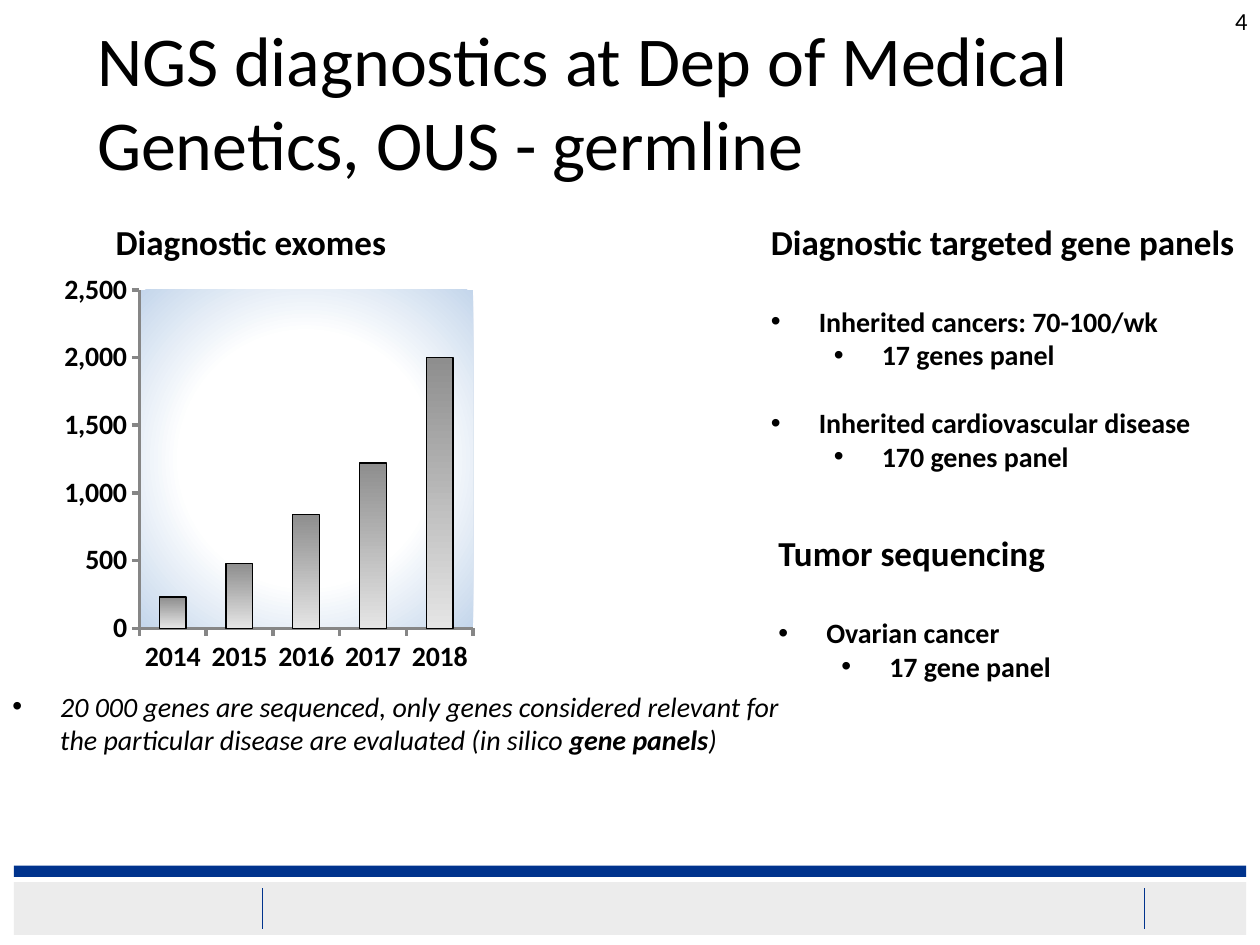
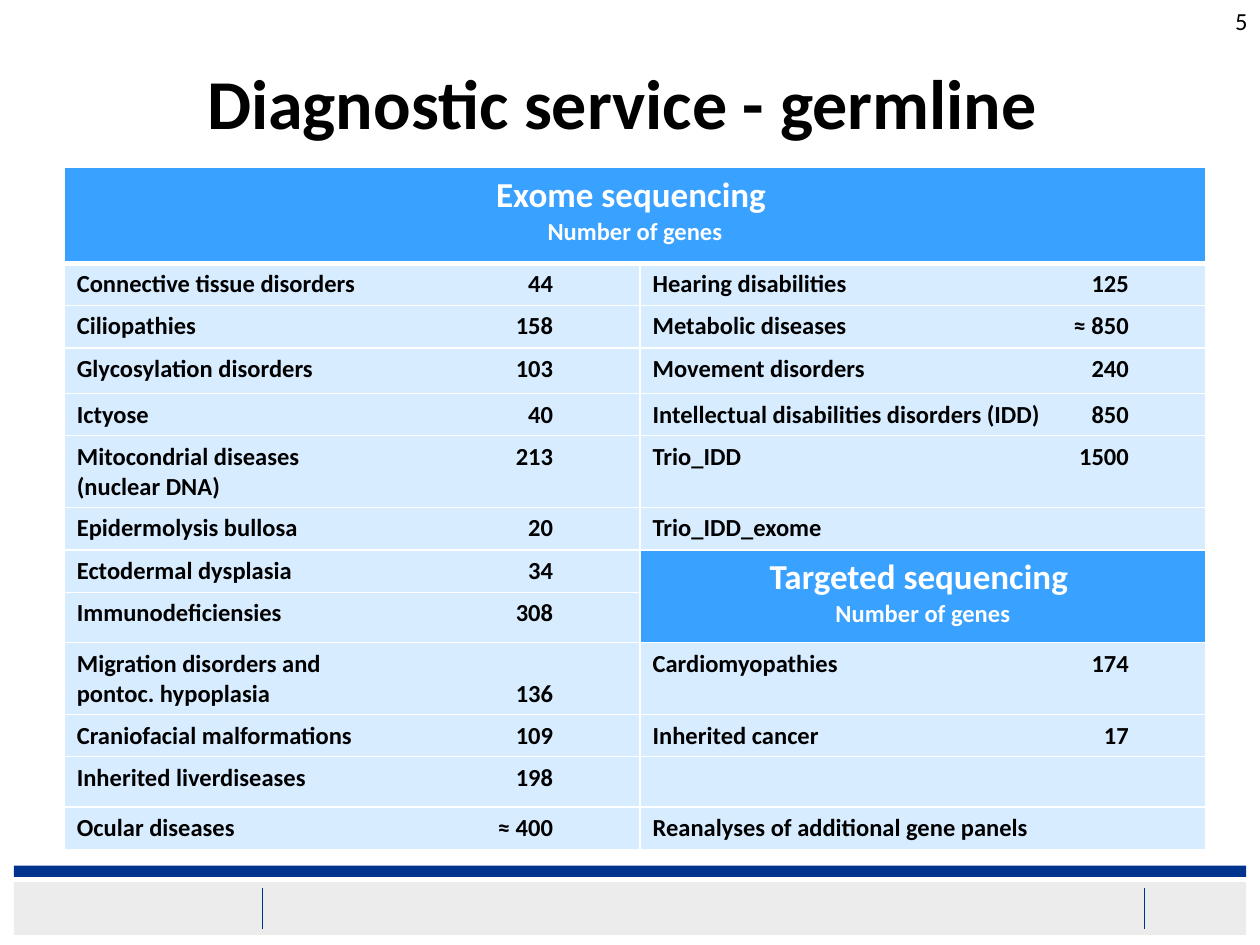
from lxml import etree
from pptx import Presentation
from pptx.chart.data import CategoryChartData
from pptx.dml.color import RGBColor
from pptx.enum.chart import XL_CHART_TYPE, XL_TICK_MARK
from pptx.enum.shapes import MSO_CONNECTOR, MSO_SHAPE
from pptx.enum.text import MSO_ANCHOR, MSO_AUTO_SIZE, PP_ALIGN
from pptx.oxml import parse_xml
from pptx.oxml.ns import nsdecls, qn
from pptx.util import Inches, Pt

LEFT, CENTER, RIGHT = PP_ALIGN.LEFT, PP_ALIGN.CENTER, PP_ALIGN.RIGHT
MIDDLE = MSO_ANCHOR.MIDDLE
NO_FIT = MSO_AUTO_SIZE.NONE
COLUMN = XL_CHART_TYPE.COLUMN_CLUSTERED
TICK_OUT = XL_TICK_MARK.OUTSIDE
RECT, STRAIGHT = MSO_SHAPE.RECTANGLE, MSO_CONNECTOR.STRAIGHT

BLACK = RGBColor(0x00, 0x00, 0x00)
WHITE = RGBColor(0xFF, 0xFF, 0xFF)
NAVY = RGBColor(0x00, 0x33, 0x8D)
PALE = RGBColor(0xEC, 0xEC, 0xEC)
BLUE = RGBColor(0x39, 0xA1, 0xFF)
LIGHT = RGBColor(0xD7, 0xEC, 0xFF)
HAZE = RGBColor(0xC4, 0xD6, 0xEB)
AXIS = RGBColor(0x86, 0x86, 0x86)
BAR_TOP = RGBColor(0x8E, 0x8E, 0x8E)
BAR_END = RGBColor(0xE5, 0xE5, 0xE5)
FONT = "Calibri"
TAB = Inches(3.78)

EXOMES = {"2014": 230, "2015": 480, "2016": 840, "2017": 1220, "2018": 2000}

# Each line: text, bullet level (None for a heading), space before in points
PANELS = [
    ("Diagnostic targeted gene panels", None, 0),
    ("Inherited cancers: 70-100/wk", 0, 24),
    ("17 genes panel", 1, 0),
    ("Inherited cardiovascular disease", 0, 19.5),
    ("170 genes panel", 1, 0),
]
TUMOR = [
    ("Tumor sequencing", None, 0),
    ("Ovarian cancer", 0, 24),
    ("17 gene panel", 1, 0),
]

# Each row: height, left cell, right cell
GENES = [
    (0.33, "Connective tissue disorders\t44", "Hearing disabilities\t125"),
    (0.34, "Ciliopathies\t158", "Metabolic diseases\t≈ 850"),
    (0.36, "Glycosylation disorders\t103", "Movement disorders\t240"),
    (0.33, "Ictyose\t40", "Intellectual disabilities disorders (IDD)\t850"),
    (0.57, "Mitocondrial diseases\t213\n(nuclear DNA)", "Trio_IDD\t1500"),
    (0.34, "Epidermolysis bullosa\t20", "Trio_IDD_exome"),
    (0.33, "Ectodermal dysplasia\t34", None),
    (0.40, "Immunodeficiensies\t308", None),
    (0.57, "Migration disorders and\npontoc. hypoplasia\t136",
     "Cardiomyopathies\t174"),
    (0.33, "Craniofacial malformations\t109", "Inherited cancer\t17"),
    (0.36, "Inherited liverdiseases\t198", ""),
    (0.34, "Ocular diseases\t≈ 400", "Reanalyses of additional gene panels"),
]
HEAD_ROW, TARGET_ROW = 0, 7


def box(*sizes):
    return [Inches(size) for size in sizes]


def style(item, **values):
    for name, value in values.items():
        setattr(item, name, value)


def set_font(font, size, color=BLACK, **marks):
    style(font, name=FONT, size=Pt(size), **marks)
    font.color.rgb = color


def add_run(para, text, size, color=BLACK, **marks):
    run = para.add_run()
    run.text = text
    set_font(run.font, size, color, **marks)


def add_bullet(para, level):
    props = para._p.get_or_add_pPr()
    props.set("marL", str(Inches(0.38 + 0.5 * level)))
    props.set("indent", str(-Inches(0.38)))
    etree.SubElement(props, qn("a:buFont")).set("typeface", "Arial")
    etree.SubElement(props, qn("a:buChar")).set("char", "•")


def add_tab(para):
    tabs = etree.SubElement(para._p.get_or_add_pPr(), qn("a:tabLst"))
    tab = etree.SubElement(tabs, qn("a:tab"))
    tab.set("pos", str(TAB))
    tab.set("algn", "r")


def add_box(slide, place):
    frame = slide.shapes.add_textbox(*box(*place)).text_frame
    frame.word_wrap = True
    return frame


def next_para(frame, index):
    return frame.add_paragraph() if index else frame.paragraphs[0]


def add_list(slide, place, lines):
    frame = add_box(slide, place)
    for i, (text, level, gap) in enumerate(lines):
        para = next_para(frame, i)
        if level is not None:
            add_bullet(para, level)
        if gap:
            para.space_before = Pt(gap)
        add_run(para, text, 20 if level is None else 16, bold=True)


def add_slide(prs, title, place, number, align=LEFT, bold=False):
    slide = prs.slides.add_slide(prs.slide_layouts[5])
    head = slide.shapes.title
    left, top, width, height = box(*place)
    style(head, left=left, top=top, width=width, height=height)
    style(head.text_frame, vertical_anchor=MIDDLE, auto_size=NO_FIT,
          word_wrap=True)
    para = head.text_frame.paragraphs[0]
    para.alignment = align
    add_run(para, title, 40, bold=bold)

    para = add_box(slide, (7.92, 0, 2.08, 0.29)).paragraphs[0]
    para.alignment = RIGHT
    add_run(para, number, 14)
    return slide


def add_band(prs, slide):
    """Draw the footer band on a slide, then move it to the master."""
    parts = []
    for top, height, color in ((7, 0.42, PALE), (6.87, 0.09, NAVY)):
        bar = slide.shapes.add_shape(RECT, *box(0.11, top, 9.78, height))
        bar.shadow.inherit = False
        bar.fill.solid()
        bar.fill.fore_color.rgb = color
        bar.line.fill.background()
        parts.append(bar)
    for x in (2.08, 9.08):
        rule = slide.shapes.add_connector(STRAIGHT, *box(x, 7.05, x, 7.37))
        rule.line.color.rgb = NAVY
        rule.line.width = Pt(0.25)
        etree.SubElement(rule._element.spPr, qn("a:effectLst"))
        parts.append(rule)
    tree = prs.slide_master.shapes.element
    for i, part in enumerate(parts):
        part.element.xpath(".//p:cNvPr")[0].set("id", str(100 + i))
        tree.append(part.element)


def shape_plot(chart):
    """Place the inner plot area and give it a round gradient."""
    plot = chart._chartSpace.chart.plotArea
    for old in plot.findall(qn("c:layout")):
        plot.remove(old)
    sizes = {"x": 0.15, "y": 0.13, "w": 0.69, "h": 0.67}
    marks = "".join(f'<c:{k}Mode val="edge"/>' for k in "xy")
    marks += "".join(f'<c:{k} val="{v}"/>' for k, v in sizes.items())
    plot.insert(0, parse_xml(
        f'<c:layout {nsdecls("c")}><c:manualLayout>'
        f'<c:layoutTarget val="inner"/>{marks}</c:manualLayout></c:layout>'))
    stops = "".join(
        f'<a:gs pos="{pos}000"><a:srgbClr val="{color}"/></a:gs>'
        for pos, color in ((53, WHITE), (100, HAZE)))
    plot.append(parse_xml(
        f'<c:spPr {nsdecls("c", "a")}><a:gradFill><a:gsLst>{stops}</a:gsLst>'
        '<a:path path="circle"><a:fillToRect l="50000" t="50000" r="50000"'
        ' b="50000"/></a:path></a:gradFill></c:spPr>'))


def add_bars(slide, place, values):
    data = CategoryChartData(number_format="#,##0")
    data.categories = list(values)
    data.add_series("Series 1", list(values.values()))
    chart = slide.shapes.add_chart(COLUMN, *box(*place), data).chart
    style(chart, has_title=False, has_legend=False)
    set_font(chart.font, 10)
    for axis in (chart.category_axis, chart.value_axis):
        style(axis, has_major_gridlines=False, major_tick_mark=TICK_OUT)
        set_font(axis.tick_labels.font, 16, bold=True)
        axis.format.line.color.rgb = AXIS
        axis.format.line.width = Pt(2)
    style(chart.value_axis, minimum_scale=0, maximum_scale=2500,
          major_unit=500)
    style(chart.value_axis.tick_labels, number_format="#,##0",
          number_format_is_linked=False)
    style(chart.plots[0], gap_width=150, vary_by_categories=False)

    look = chart.plots[0].series[0].format
    look.fill.gradient()
    look.fill.gradient_angle = 270
    for stop, color in zip(look.fill.gradient_stops, (BAR_TOP, BAR_END)):
        stop.color.rgb = color
    look.line.color.rgb = BLACK
    look.line.width = Pt(0.75)
    shape_plot(chart)


def paint(cell, fill, base=1):
    """Give a cell white borders and a fill; base is the lower border."""
    props = cell._tc.get_or_add_tcPr()
    for side, width in zip("LRTB", (1, 1, 1, base)):
        props.append(parse_xml(
            f'<a:ln{side} {nsdecls("a")} w="{Pt(width)}"><a:solidFill>'
            f'<a:srgbClr val="{WHITE}"/></a:solidFill></a:ln{side}>'))
    cell.fill.solid()
    cell.fill.fore_color.rgb = fill


def fill_head(cell, text):
    for i, (line, size) in enumerate(((text, 20), ("Number of genes", 14))):
        para = next_para(cell.text_frame, i)
        para.alignment = CENTER
        add_run(para, line, size, WHITE, bold=True)


def fill_cell(cell, text):
    for i, line in enumerate(text.split("\n")):
        para = next_para(cell.text_frame, i)
        if "\t" in line:
            add_tab(para)
        add_run(para, line, 14, bold=True)


def add_genes(slide, place):
    rows = len(GENES) + 1
    table = slide.shapes.add_table(rows, 2, *box(*place)).table
    table.columns[0].width, table.columns[1].width = box(4.57, 4.49)
    table.rows[HEAD_ROW].height = Inches(0.76)
    for col in (0, 1):
        paint(table.cell(HEAD_ROW, col), BLUE, 3)
    for row, (height, *texts) in enumerate(GENES, 1):
        table.rows[row].height = Inches(height)
        for col, text in enumerate(texts):
            cell = table.cell(row, col)
            paint(cell, BLUE if text is None else LIGHT)
            if text:
                fill_cell(cell, text)
    head, target = table.cell(HEAD_ROW, 0), table.cell(TARGET_ROW, 1)
    head.merge(table.cell(HEAD_ROW, 1))
    target.merge(table.cell(TARGET_ROW + 1, 1))
    fill_head(head, "Exome sequencing ")
    fill_head(target, "Targeted sequencing ")


def add_note(slide, place):
    para = add_box(slide, place).paragraphs[0]
    add_bullet(para, 0)
    add_run(para, "20 000 genes are sequenced, only genes considered relevant "
            "for the particular disease are evaluated (in silico ", 16,
            italic=True)
    add_run(para, "gene panels", 16, italic=True, bold=True)
    add_run(para, ")", 16, italic=True)


def main():
    prs = Presentation()
    prs.slide_width, prs.slide_height = box(10, 7.5)

    slide = add_slide(
        prs, "NGS diagnostics at Dep of Medical Genetics, OUS - germline",
        (0.67, 0.17, 8.5, 1.25), "4")
    add_band(prs, slide)
    add_note(slide, (0, 5.42, 6.4, 0.95))
    add_bars(slide, (0.51, 1.78, 3.86, 4.01), EXOMES)
    add_list(slide, (0.82, 1.7, 2.4, 0.44), [("Diagnostic exomes", None, 0)])
    add_list(slide, (6.02, 1.7, 3.95, 2.12), PANELS)
    add_list(slide, (6.08, 4.17, 2.4, 1.31), TUMOR)

    slide = add_slide(prs, "Diagnostic service - germline ",
                      (0.5, 0.3, 9, 1.01), "5", CENTER, True)
    add_genes(slide, (0.51, 1.33, 9.06, 5.36))
    prs.save("out.pptx")


if __name__ == "__main__":
    main()
